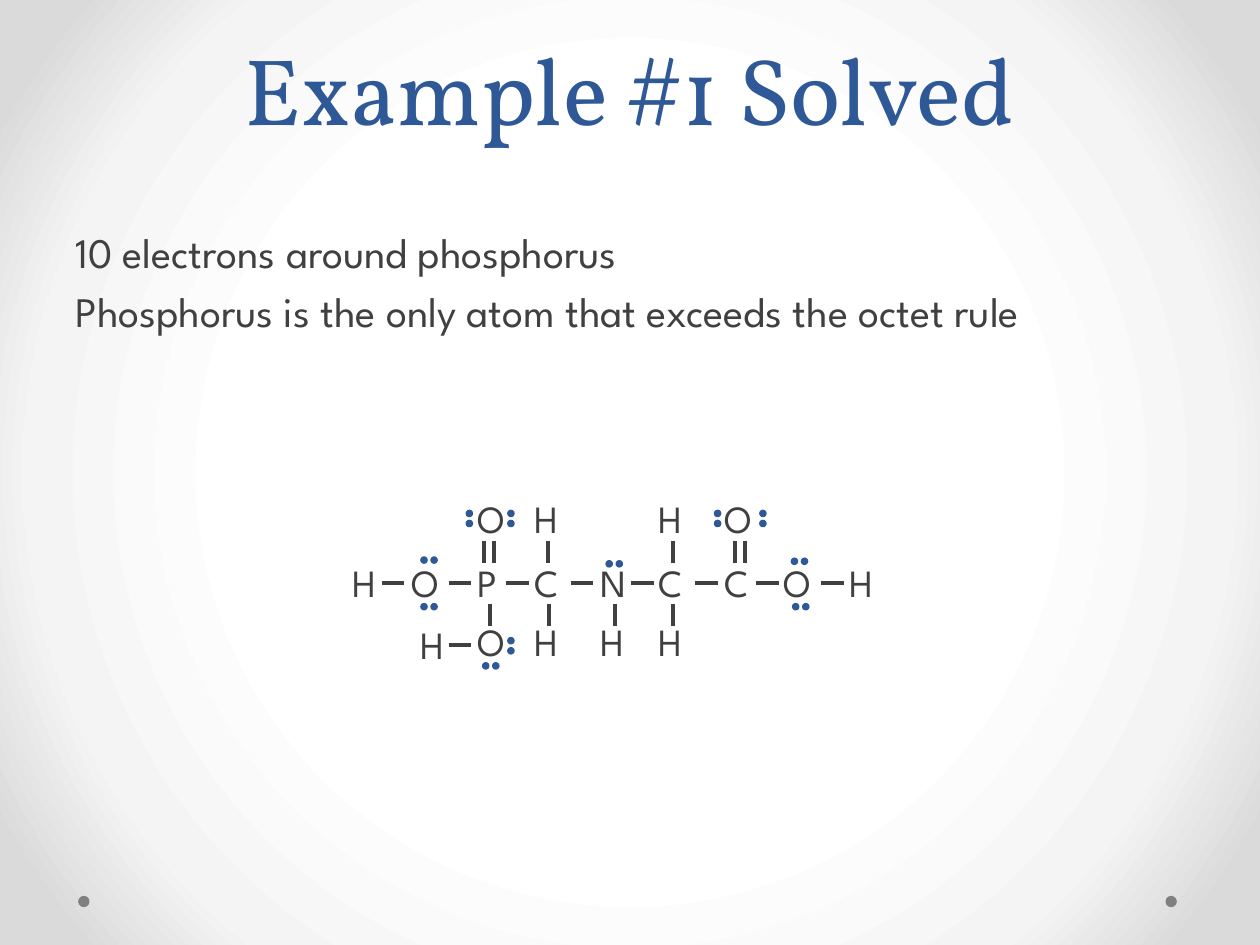
from lxml import etree
from pptx import Presentation, util as u
from pptx.dml.color import RGBColor
from pptx.enum import shapes, text
from pptx.oxml import parse_xml
from pptx.oxml.ns import nsdecls, qn

COLORS = {"accent": "2F5897", "ink": "404040", "corner": "808080",
          "center": "FFFFFF", "middle": "F4F4F4", "edge": "DADADA"}
TITLE_FONT, BODY_FONT = "Vollkorn", "League Spartan"
WIDTH, HEIGHT = 10, 7.5

COLUMNS = [2.7, 3.17, 3.69, 4.14, 4.67, 5.13, 5.65, 6.12, 6.64]
ROWS = [3.88, 4.39, 4.86]
LETTER_WIDTHS = {"C": 0.45, "H": 0.41, "O": 0.47, "P": 0.45, "N": 0.43}
LETTER_HEIGHT = 0.47
BOND_LENGTH = 0.18
DOT, DOT_GAP = 0.05, 0.08

CHAIN = "HOPCNCCOH"
TOP_ATOMS = {2: "O", 3: "H", 5: "H", 6: "O"}
BOTTOM_ATOMS = {2: "O", 3: "H", 4: "H", 5: "H"}
SIDE_HYDROGEN = (3.24, 4.88)

CHAIN_BONDS = [3.03, 3.56, 4.02, 4.53, 5.01, 5.52, 6, 6.52]
UPPER_BONDS = [3.84, 3.92, 4.35, 5.34, 5.83, 5.91]
LOWER_BONDS = [3.89, 4.36, 4.88, 5.34]
CHAIN_Y, UPPER_Y, LOWER_Y = 4.63, 4.29, 4.79
SIDE_BOND = (3.56, 5.12)

FLAT_PAIRS = [(3.34, 4.42), (3.34, 4.79), (3.83, 5.26),
              (4.81, 4.45), (6.28, 4.43), (6.29, 4.79)]
UPRIGHT_PAIRS = [(3.7, 4.05), (4.03, 4.05), (4.03, 5.06),
                 (5.67, 4.05), (6.03, 4.05)]


def color(name):
    return RGBColor.from_string(COLORS[name])


def inches(*lengths):
    return [u.Inches(length) for length in lengths]


def add_run(paragraph, words, font, size, tone):
    run = paragraph.add_run()
    run.text = words
    run.font.name = font
    run.font.size = u.Pt(size)
    run.font.color.rgb = color(tone)


def paint_background(slide):
    fill = slide.background.fill
    fill.gradient()
    stops = "".join(
        f'<a:gs pos="{share * 1000}"><a:srgbClr val="{COLORS[tone]}"/></a:gs>'
        for share, tone in ((50, "center"), (76, "middle"), (92, "edge")))
    radial = parse_xml(
        f'<a:gradFill {nsdecls("a")} rotWithShape="1"><a:gsLst>{stops}</a:gsLst>'
        '<a:path path="circle"><a:fillToRect l="50000" t="50000" r="50000" '
        'b="50000"/></a:path></a:gradFill>')
    linear = next(slide.element.iter(qn("a:gradFill")))
    linear.getparent().replace(linear, radial)


def place(holder, left, top, width, height):
    holder.left, holder.top, holder.width, holder.height = inches(
        left * WIDTH, top * HEIGHT, width * WIDTH, height * HEIGHT)


def write_title(heading, words):
    place(heading, 0.05, 0, 0.9, 0.16)
    frame = heading.text_frame
    frame.auto_size = text.MSO_AUTO_SIZE.NONE
    frame.vertical_anchor = text.MSO_ANCHOR.BOTTOM
    paragraph = frame.paragraphs[0]
    paragraph.alignment = text.PP_ALIGN.CENTER
    paragraph.line_spacing = u.Pt(58)
    add_run(paragraph, words, TITLE_FONT, 54, "accent")


def write_list(body, statements):
    place(body, 0.05, 0.233, 0.9, 0.66)
    frame = body.text_frame
    frame.auto_size = text.MSO_AUTO_SIZE.NONE
    for index, statement in enumerate(statements):
        paragraph = frame.add_paragraph() if index else frame.paragraphs[0]
        paragraph.space_before = u.Pt(24 * 0.2)
        properties = paragraph._p.get_or_add_pPr()
        properties.set("marL", "0")
        properties.set("indent", "0")
        etree.SubElement(properties, qn("a:buNone"))
        add_run(paragraph, statement, BODY_FONT, 24, "ink")


def add_atom(molecule, symbol, left, top):
    atom = molecule.add_textbox(
        *inches(left, top, LETTER_WIDTHS[symbol], LETTER_HEIGHT))
    frame = atom.text_frame
    frame.word_wrap = False
    frame.auto_size = text.MSO_AUTO_SIZE.SHAPE_TO_FIT_TEXT
    add_run(frame.paragraphs[0], symbol, BODY_FONT, 22, "ink")


def add_bond(molecule, left, top, upright=False):
    right = left if upright else left + BOND_LENGTH
    bottom = top + BOND_LENGTH if upright else top
    bond = molecule.add_connector(shapes.MSO_CONNECTOR.STRAIGHT,
                                  *inches(left, top, right, bottom))
    bond.line.color.rgb = color("ink")
    bond.line.width = u.Pt(2.25)
    etree.SubElement(bond._element.spPr, qn("a:effectLst"))


def add_dot(parent, left, top, size, tone, outlined):
    dot = parent.add_shape(shapes.MSO_SHAPE.OVAL, *inches(left, top, size, size))
    dot.shadow.inherit = False
    dot.fill.solid()
    dot.fill.fore_color.rgb = color(tone)
    if outlined:
        dot.line.color.rgb = color(tone)
        dot.line.width = u.Pt(0.75)
    else:
        dot.line.fill.background()


def add_lone_pair(molecule, left, top, upright=False):
    for step in (0, DOT_GAP):
        across, down = (0, step) if upright else (step, 0)
        add_dot(molecule, left + across, top + down, DOT, "accent", True)


def draw_molecule(slide):
    molecule = slide.shapes.add_group_shape().shapes
    for row, atoms in zip(ROWS, (TOP_ATOMS, dict(enumerate(CHAIN)), BOTTOM_ATOMS)):
        for column, symbol in atoms.items():
            add_atom(molecule, symbol, COLUMNS[column], row)
    add_atom(molecule, "H", *SIDE_HYDROGEN)

    for left in CHAIN_BONDS:
        add_bond(molecule, left, CHAIN_Y)
    add_bond(molecule, *SIDE_BOND)
    for top, bonds in ((UPPER_Y, UPPER_BONDS), (LOWER_Y, LOWER_BONDS)):
        for left in bonds:
            add_bond(molecule, left, top, upright=True)

    for pair in FLAT_PAIRS:
        add_lone_pair(molecule, *pair)
    for pair in UPRIGHT_PAIRS:
        add_lone_pair(molecule, *pair, upright=True)


def main():
    deck = Presentation()
    deck.slide_width, deck.slide_height = inches(WIDTH, HEIGHT)
    slide = deck.slides.add_slide(deck.slide_layouts[1])
    paint_background(slide)
    for left in (0.62, 9.25):
        add_dot(slide.shapes, left, 7.11, 0.09, "corner", False)
    write_title(slide.shapes.title, "Example #1 Solved")
    write_list(slide.placeholders[1], [
        "10 electrons around phosphorus",
        "Phosphorus is the only atom that exceeds the octet rule"])
    draw_molecule(slide)
    deck.save("out.pptx")


if __name__ == "__main__":
    main()
